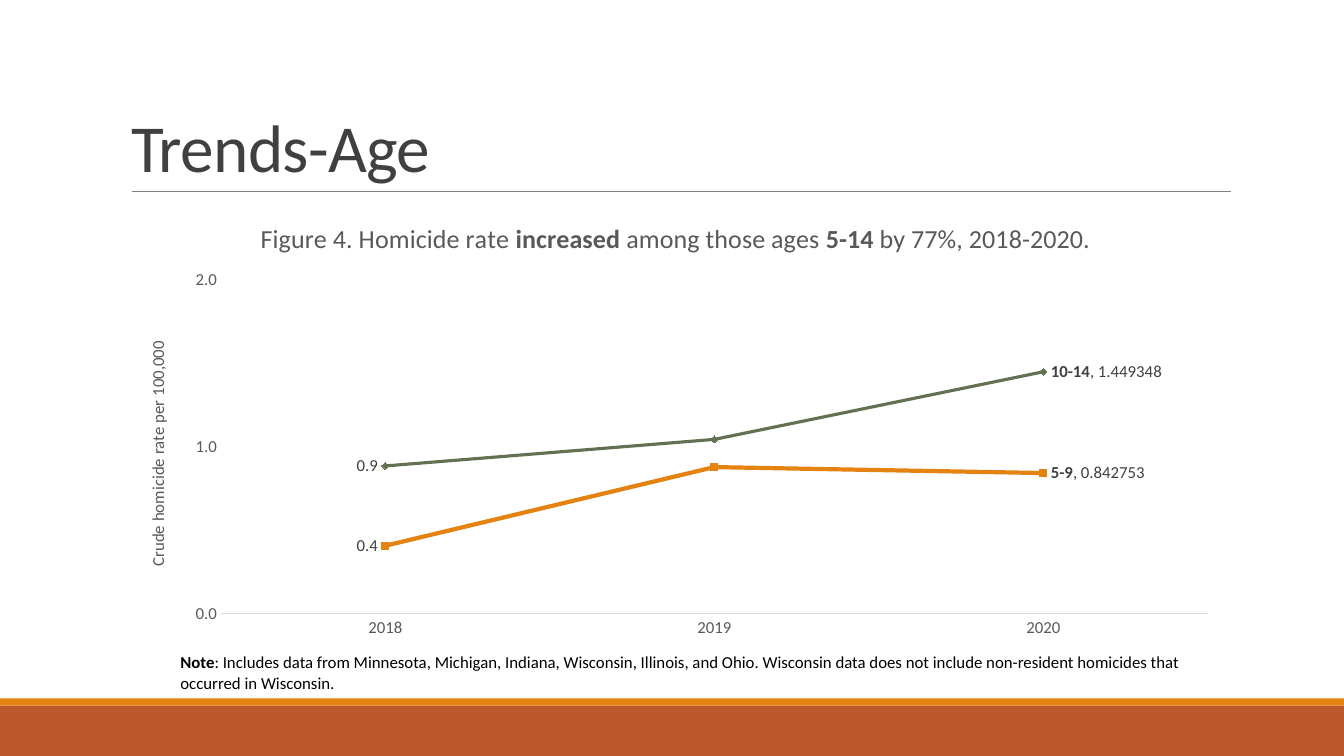
from pptx import Presentation
from pptx.chart.data import CategoryChartData as Data
from pptx.dml.color import RGBColor as RGB
from pptx.enum.chart import XL_CHART_TYPE as Kind, XL_LABEL_POSITION as Pos, XL_TICK_MARK as Tick
from pptx.enum.shapes import MSO_CONNECTOR as Conn, MSO_SHAPE as Form
from pptx.enum.text import MSO_ANCHOR as Anchor, PP_ALIGN as Align
from pptx.oxml import parse_xml
from pptx.oxml.ns import nsdecls
from pptx.util import Inches, Pt

HEX = {"rust": "BD582C", "orange": "E48312", "green": "637052", "rule": "808080",
       "dark": "404040", "gray": "595959", "axis": "D9D9D9", "black": "000000"}


def style(font, size, color, bold=False):
    font.name = "Calibri"
    font.size = Pt(size)
    font.bold = bold
    font.color.rgb = RGB.from_string(HEX[color])


def write(frame, runs, size, color):
    para = frame.paragraphs[0]
    for text, bold in runs:
        run = para.add_run()
        run.text = text
        style(run.font, size, color, bold)
    return para


deck = Presentation()
deck.slide_width, deck.slide_height = Inches(13.33), Inches(7.5)
slide = deck.slides.add_slide(deck.slide_layouts[5])
shapes = slide.shapes

# Footer bands
for top, high, color in [(7, 0.5, "rust"), (6.93, 0.07, "orange")]:
    band = shapes.add_shape(Form.RECTANGLE, 0, Inches(top), Inches(13.33), Inches(high))
    band.shadow.inherit = False
    band.fill.solid()
    band.fill.fore_color.rgb = RGB.from_string(HEX[color])
    band.line.fill.background()

# Rule under the title
rule = shapes.add_connector(Conn.STRAIGHT, Inches(1.31), Inches(1.9), Inches(12.21), Inches(1.9))
rule.line.color.rgb = RGB.from_string(HEX["rule"])
rule.line.width = Pt(0.5)
rule._element.spPr.append(parse_xml(f"<a:effectLst {nsdecls('a')}/>"))

# Title
title = shapes.title
title.left, title.top = Inches(1.2), Inches(0.31)
title.width, title.height = Inches(11), Inches(1.59)
title.text_frame.vertical_anchor = Anchor.BOTTOM
head = write(title.text_frame, [("Trends-Age", False)], 48, "dark")
head.alignment = Align.LEFT
head.line_spacing = 0.85
head.runs[0]._r.get_or_add_rPr().set("spc", "-50")

# Line chart
ages = [("5-9", [0.407487, 0.878264, 0.842753], "orange", 3),
        ("10-14", [0.885117, 1.044106, 1.449348], "green", 2.25)]
data = Data(number_format="0.0")
data.categories = ["2018", "2019", "2020"]
for name, rates, _, _ in ages:
    data.add_series(name, rates)
chart = shapes.add_chart(Kind.LINE, Inches(1.2), Inches(2.02), Inches(11), Inches(4.4), data).chart
style(chart.font, 10, "black")
chart.has_legend = False
chart.has_title = True
write(chart.chart_title.text_frame,
      [("Figure 4. Homicide rate ", False), ("increased", True), (" among those ages ", False),
       ("5-14", True), (" by 77%, 2018-2020.", False)], 18.6, "gray")
chart.chart_title.include_in_layout = False

# Plot area as shares of the chart frame
area = chart._chartSpace.chart.plotArea
for old in area.xpath("c:layout"):
    area.remove(old)
parts = "".join(f'<c:{tag} val="{val}"/>' for tag, val in [
    ("layoutTarget", "inner"), ("xMode", "edge"), ("yMode", "edge"),
    ("x", 0.09), ("y", 0.172), ("w", 0.89), ("h", 0.753)])
area.insert(0, parse_xml(
    f"<c:layout {nsdecls('c')}><c:manualLayout>{parts}</c:manualLayout></c:layout>"))

# Axes
years, scale = chart.category_axis, chart.value_axis
for axis in (years, scale):
    axis.major_tick_mark = axis.minor_tick_mark = Tick.NONE
    axis.has_major_gridlines = False
    style(axis.tick_labels.font, 12, "gray")
years.format.line.color.rgb = RGB.from_string(HEX["axis"])
years.format.line.width = Pt(0.75)
scale.format.line.fill.background()
scale.minimum_scale, scale.maximum_scale, scale.major_unit = 0, 2, 1
scale.tick_labels.number_format = "0.0"
scale.tick_labels.number_format_is_linked = False
write(scale.axis_title.text_frame, [("Crude homicide rate per 100,000", False)], 12, "gray")

# Series and their end labels
chart.plots[0].vary_by_categories = False
for line, (name, rates, color, width) in zip(chart.plots[0].series, ages):
    line.smooth = False
    line.marker.style = None
    line.format.line.color.rgb = RGB.from_string(HEX[color])
    line.format.line.width = Pt(width)
    line.data_labels.show_value = False
    first, last = (line.points[i].data_label for i in (0, 2))
    style(first.font, 12, "dark")
    first.position = Pos.LEFT
    write(last.text_frame, [(name, True), (f", {rates[2]}", False)], 12, "dark")
    last.position = Pos.RIGHT

# Note
note = shapes.add_textbox(Inches(1.69), Inches(6.42), Inches(10.25), Inches(0.5)).text_frame
note.word_wrap = True
write(note, [("Note", True),
             (": Includes data from Minnesota, Michigan, Indiana, Wisconsin, Illinois, and Ohio. "
              "Wisconsin data does not include non-resident homicides that occurred in Wisconsin.",
              False)], 12, "black")

deck.save("out.pptx")
